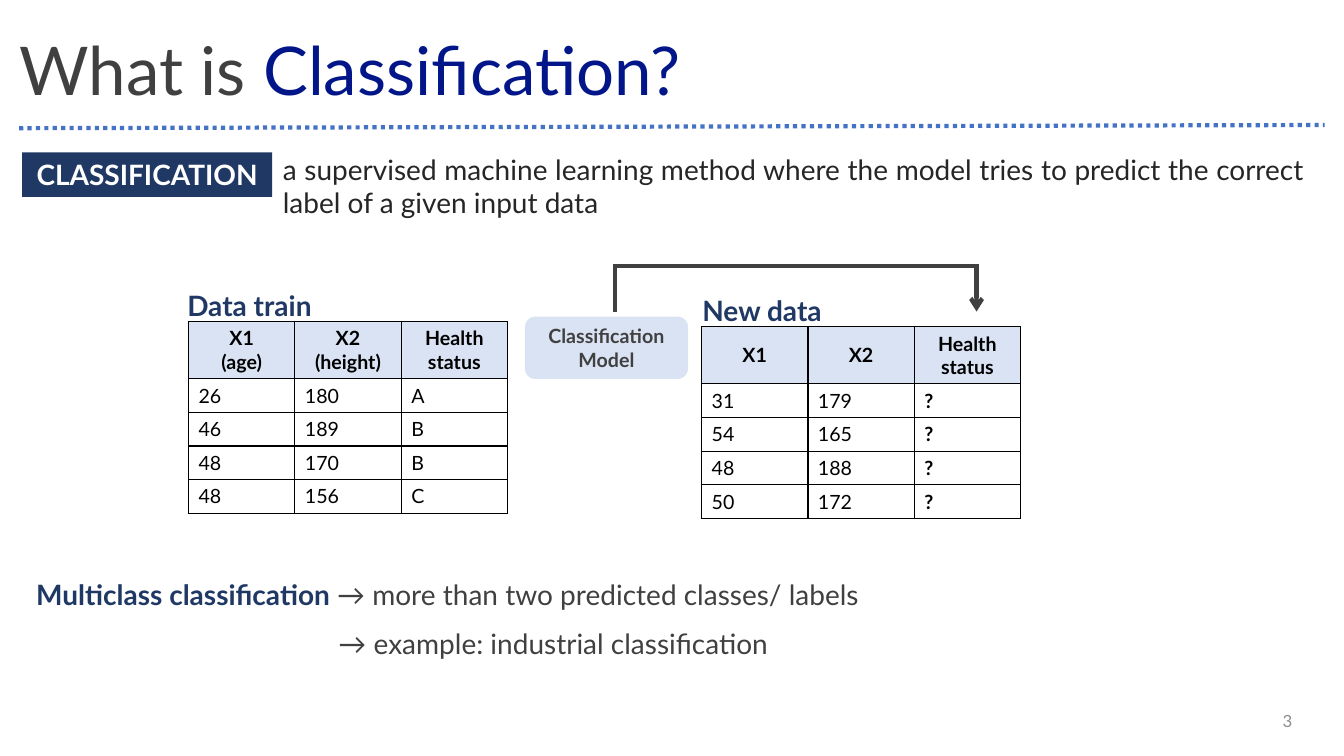
from lxml import etree
from pptx import Presentation
from pptx.dml.color import RGBColor
from pptx.enum import dml, shapes, text
from pptx.oxml import parse_xml
from pptx.oxml.ns import nsdecls, qn
from pptx.util import Cm, Pt

NAVY = RGBColor(0x20, 0x38, 0x64)
ROYAL = RGBColor(0x02, 0x16, 0x89)
BLUE = RGBColor(0x44, 0x72, 0xC4)
PALE = RGBColor(0xDA, 0xE3, 0xF3)
DARK = RGBColor(0x40, 0x40, 0x40)
INK = RGBColor(0x26, 0x26, 0x26)
GREY = RGBColor(0x8C, 0x8C, 0x8C)
BLACK = RGBColor(0, 0, 0)
WHITE = RGBColor(255, 255, 255)
LEFT, MID, RIGHT, JUST = (text.PP_ALIGN.LEFT, text.PP_ALIGN.CENTER,
                          text.PP_ALIGN.RIGHT, text.PP_ALIGN.JUSTIFY)
TOP, CENTRE = text.MSO_ANCHOR.TOP, text.MSO_ANCHOR.MIDDLE

prs = Presentation()
prs.slide_width, prs.slide_height = Cm(33.87), Cm(19.05)
slide = prs.slides.add_slide(prs.slide_layouts[6])
items = slide.shapes


def write(para, runs, size, align):
    para.alignment = align
    for words, color, bold in runs:
        run = para.add_run()
        run.text = words
        font = run.font
        font.name, font.size, font.bold = "Lato", Pt(size), bold
        font.color.rgb = color


def link(x1, y1, x2, y2, color):
    line = items.add_connector(shapes.MSO_CONNECTOR.STRAIGHT,
                               Cm(x1), Cm(y1), Cm(x2), Cm(y2))
    line.line.color.rgb, line.line.width = color, Pt(3)
    etree.SubElement(line._element.spPr, qn("a:effectLst"))
    return line.line


# Rule below the title
rule = link(0.48, 3.23, 33.38, 3.15, BLUE)
rule.dash_style = dml.MSO_LINE.ROUND_DOT

# Text boxes: left, top, width, height, size, alignment, anchor, runs
boxes = [
    (0.25, 0.43, 32.89, 2.84, 48, LEFT, CENTRE,
     [("What is ", DARK, False), ("Classification?", ROYAL, False)]),
    (4.47, 7.14, 5.08, 1.12, 20, JUST, TOP, [("Data train", NAVY, True)]),
    (17.45, 7.26, 5.08, 1.12, 20, JUST, TOP, [("New data", NAVY, True)]),
    (6.88, 3.71, 26.24, 1.96, 20, JUST, TOP,
     [("a supervised machine learning method where the model tries to "
       "predict the correct label of a given input data", INK, False)]),
    (0.66, 14.43, 26.24, 1.12, 20, JUST, TOP,
     [("Multiclass classification ", NAVY, True),
      ("→ more than two predicted classes/ labels", DARK, False)]),
    (8.28, 15.67, 15.54, 1.12, 20, JUST, TOP,
     [("→ example: industrial classification", DARK, False)]),
    (25.2, 17.65, 7.62, 1.02, 12, RIGHT, CENTRE, [("3", GREY, False)]),
]
for x, y, w, h, size, align, anchor, runs in boxes:
    frame = items.add_textbox(Cm(x), Cm(y), Cm(w), Cm(h)).text_frame
    frame.word_wrap, frame.vertical_anchor = True, anchor
    write(frame.paragraphs[0], runs, size, align)
    if size == 48:
        frame.paragraphs[0].line_spacing = 0.9

# Filled labels
RECT, ROUND = shapes.MSO_SHAPE.RECTANGLE, shapes.MSO_SHAPE.ROUNDED_RECTANGLE
labels = [
    (RECT, 0.56, 3.84, 6.3, 1.12, NAVY, WHITE, 20, "CLASSIFICATION"),
    (ROUND, 13.23, 7.98, 4.11, 1.57, PALE, DARK, 14, "Classification Model"),
]
for kind, x, y, w, h, fill, color, size, words in labels:
    label = items.add_shape(kind, Cm(x), Cm(y), Cm(w), Cm(h))
    label.shadow.inherit = False
    label.fill.solid()
    label.fill.fore_color.rgb = fill
    label.line.fill.background()
    frame = label.text_frame
    frame.word_wrap, frame.vertical_anchor = True, CENTRE
    write(frame.paragraphs[0], [(words, color, True)], size, MID)

# Tables: left, top, rows
tables = [
    (4.75, 8.1, [("X1\n(age)", "X2\n(height)", "Health status"),
                 ("26", "180", "A"), ("46", "189", "B"),
                 ("48", "170", "B"), ("48", "156", "C")]),
    (17.68, 8.23, [("X1", "X2", "Health status"),
                   ("31", "179", "?"), ("54", "165", "?"),
                   ("48", "188", "?"), ("50", "172", "?")]),
]
for x, y, rows in tables:
    grid = items.add_table(len(rows), 3, Cm(x), Cm(y), Cm(8.04), Cm(4.19)).table
    grid.horz_banding = False
    for col in grid.columns:
        col.width = Cm(2.68)
    for r, row in enumerate(rows):
        head = r == 0
        grid.rows[r].height = Cm(1.35 if head else 0.71)
        for c, words in enumerate(row):
            cell = grid.cell(r, c)
            cell.vertical_anchor = CENTRE if head else TOP
            frame = cell.text_frame
            for i, part in enumerate(words.split("\n")):
                para = frame.add_paragraph() if i else frame.paragraphs[0]
                write(para, [(part, BLACK, head or part == "?")], 14,
                      MID if head else LEFT)
            # Borders go before the fill
            props = cell._tc.get_or_add_tcPr()
            for side in ("lnL", "lnR", "lnT", "lnB"):
                props.append(parse_xml(
                    f'<a:{side} {nsdecls("a")} w="12700"><a:solidFill>'
                    f'<a:srgbClr val="{BLACK}"/></a:solidFill></a:{side}>'))
            if head:
                cell.fill.solid()
                cell.fill.fore_color.rgb = PALE
            else:
                cell.fill.background()

# Arrow from the model to the unknown status
link(15.49, 7.85, 15.49, 6.68, DARK)
arrow = link(24.61, 7.85, 24.61, 6.65, DARK)
etree.SubElement(arrow._get_or_add_ln(), qn("a:headEnd"), type="arrow")
link(24.59, 6.71, 15.44, 6.71, DARK)

prs.save("out.pptx")
